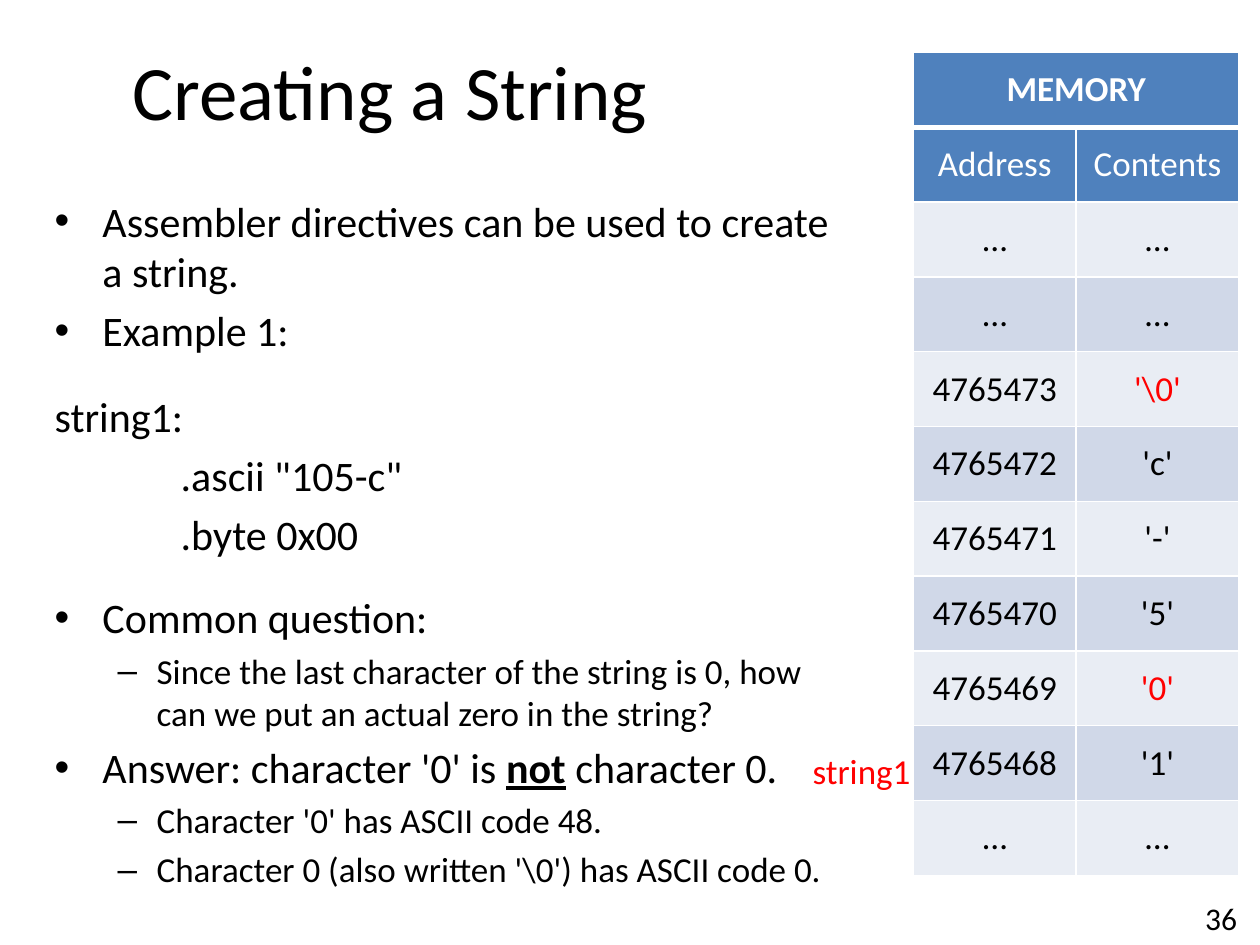
from dataclasses import dataclass
from lxml import etree
from pptx import Presentation, util as u
from pptx.dml.color import RGBColor
from pptx.enum import text as t
from pptx.oxml import ns


@dataclass(frozen=True)
class Theme:
    font: str = "Calibri"
    ink: str = "000000"
    paper: str = "FFFFFF"
    accent: str = "FF0000"
    header: str = "4F81BD"
    bands: tuple = ("E9EDF4", "D0D8E8")
    title: int = 44
    body: int = 24
    small: int = 20
    number: int = 18


THEME = Theme()
COLUMNS, ROWS = 120, 90
CENTER = t.PP_ALIGN.CENTER
BULLETS = {0: ("•", 0.38, 0.38), 1: ("–", 0.81, 0.31)}


def write(paragraph, content, size=THEME.body, color=THEME.ink, bold=False,
          underline=False, align=None):
    run = paragraph.add_run()
    run.text = content
    run.font.name = THEME.font
    run.font.size = u.Pt(size)
    run.font.color.rgb = RGBColor.from_string(color)
    run.font.bold = bold
    run.font.underline = underline
    if align is not None:
        paragraph.alignment = align


def set_indent(paragraph, margin, hanging=0, bullet=None):
    properties = paragraph._p.get_or_add_pPr()
    properties.set("marL", str(u.Inches(margin)))
    properties.set("indent", str(-u.Inches(hanging)))
    if bullet:
        etree.SubElement(properties, ns.qn("a:buFont")).set("typeface", "Arial")
        etree.SubElement(properties, ns.qn("a:buChar")).set("char", bullet)
    else:
        etree.SubElement(properties, ns.qn("a:buNone"))


def set_borders(cell, widths):
    properties = cell._tc.get_or_add_tcPr()
    for index, (side, width) in enumerate(widths.items()):
        line = etree.Element(ns.qn(f"a:ln{side}"), w=str(u.Pt(width)))
        fill = etree.SubElement(line, ns.qn("a:solidFill"))
        etree.SubElement(fill, ns.qn("a:srgbClr")).set("val", THEME.paper)
        properties.insert(index, line)


class SlideBuilder:
    def __init__(self, presentation):
        self.width = presentation.slide_width
        self.height = presentation.slide_height
        self.slide = presentation.slides.add_slide(presentation.slide_layouts[1])

    def area(self, column, row, columns, rows):
        across, down = self.width / COLUMNS, self.height / ROWS
        return (round(column * across), round(row * down),
                round(columns * across), round(rows * down))

    def place(self, shape, area):
        shape.left, shape.top, shape.width, shape.height = self.area(*area)
        shape.text_frame.auto_size = t.MSO_AUTO_SIZE.NONE
        shape.text_frame.word_wrap = True
        return shape.text_frame

    def title(self, content, area):
        frame = self.place(self.slide.shapes.title, area)
        frame.vertical_anchor = t.MSO_ANCHOR.MIDDLE
        write(frame.paragraphs[0], content, size=THEME.title, align=CENTER)

    def body(self, items, area):
        frame = self.place(self.slide.placeholders[1], area)
        for index, (kind, gap, *parts) in enumerate(items):
            paragraph = frame.paragraphs[0] if index == 0 else frame.add_paragraph()
            size = THEME.small if kind == 1 else THEME.body
            paragraph.space_before = u.Pt(size * 0.2 + gap)
            if kind in BULLETS:
                paragraph.level = kind
                bullet, margin, hanging = BULLETS[kind]
                set_indent(paragraph, margin, hanging, bullet)
            else:
                set_indent(paragraph, 1 if kind == "code" else 0)
            for part in parts:
                strong = part == "not"
                write(paragraph, part, size=size, bold=strong, underline=strong)

    def label(self, content, area, wrap=True, **style):
        shape = self.slide.shapes.add_textbox(*self.area(*area))
        shape.text_frame.word_wrap = wrap
        write(shape.text_frame.paragraphs[0], content, **style)

    def table(self, heading, names, records, area):
        rows = [(heading, ""), names, *records]
        table = self.slide.shapes.add_table(
            len(rows), len(names), *self.area(*area)).table
        table.cell(0, 0).merge(table.cell(0, 1))
        for row, values in enumerate(rows):
            is_header = row < 2
            fill = THEME.header if is_header else THEME.bands[row % 2]
            for column, value in enumerate(values):
                cell = table.cell(row, column)
                cell.vertical_anchor = t.MSO_ANCHOR.MIDDLE
                cell.fill.solid()
                cell.fill.fore_color.rgb = RGBColor.from_string(fill)
                set_borders(cell, {"L": 1, "R": 1, "T": 3 if row == 1 else 1,
                                   "B": 3 if row == 0 else 1})
                if value:
                    color = THEME.paper if is_header else THEME.ink
                    if value in ("'\\0'", "'0'"):
                        color = THEME.accent
                    write(cell.text_frame.paragraphs[0], value, size=THEME.small,
                          color=color, bold=row == 0, align=CENTER)


def main():
    presentation = Presentation()
    presentation.slide_width = u.Inches(10)
    presentation.slide_height = u.Inches(7.5)
    builder = SlideBuilder(presentation)

    builder.title("Creating a String ", (6, 1, 64, 15))
    builder.body([
        (0, 0, "Assembler directives can be used to create a string."),
        (0, 0, "Example 1:"),
        ("plain", 15.6, "string1:"),
        ("code", 0, '.ascii "105-c"'),
        ("code", 0, ".byte 0x00"),
        (0, 14.2, "Common question:"),
        (1, 0, "Since the last character of the string is 0, "
               "how can we put an actual zero in the string?"),
        (0, 0, "Answer: character '0' is ", "not", " character 0."),
        (1, 0, "Character '0' has ASCII code 48."),
        (1, 0, "Character 0 (also written '\\0') has ASCII code 0."),
    ], (4, 18, 78.1, 66))
    builder.label("36", (91, 85, 28, 4.8), size=THEME.number,
                  align=t.PP_ALIGN.RIGHT)

    contents = ("'\\0'", "'c'", "'-'", "'5'", "'0'", "'1'")
    memory = [(str(4765473 - offset), value)
              for offset, value in enumerate(contents)]
    skipped = ("…", "…")
    builder.table("MEMORY", ("Address", "Contents"),
                  [skipped, skipped, *memory, skipped], (87, 5, 31, 78.4))
    builder.label("string1", (76.2, 70.8, 11.9, 5.3), wrap=False,
                  size=THEME.small, color=THEME.accent)
    presentation.save("out.pptx")


if __name__ == "__main__":
    main()
